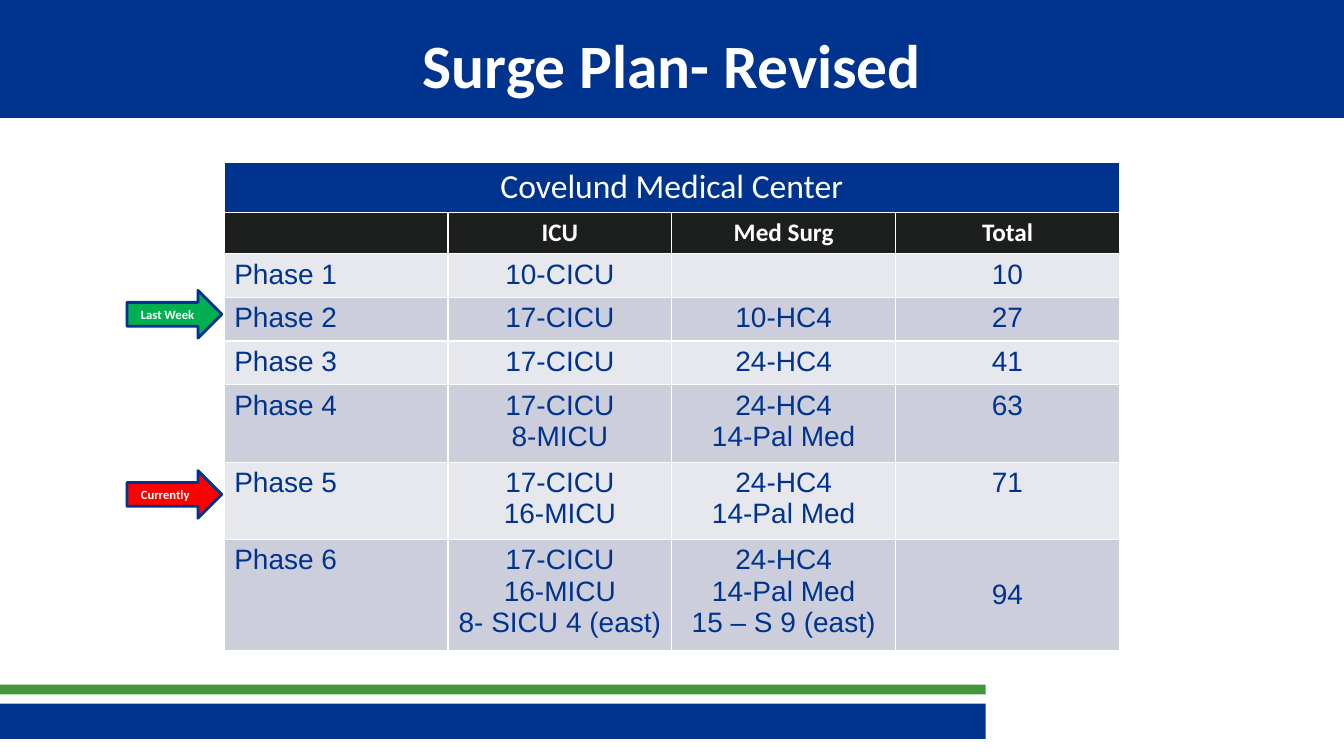
from lxml import etree
from pptx import Presentation
from pptx.dml.color import RGBColor
from pptx.enum import shapes, text
from pptx.oxml.ns import qn
from pptx.util import Cm, Pt

BLUE, GREEN, WHITE, BLACK = "00338E", "439539", "FFFFFF", "1D1E1E"
BANDS = ("E7E8EE", "CCCEDB")
LEFT, CENTER = text.PP_ALIGN.LEFT, text.PP_ALIGN.CENTER
MIDDLE = text.MSO_ANCHOR.MIDDLE

TITLE = dict(name="Calibri", size=Pt(44), bold=True, color=WHITE)
HOSPITAL = dict(name="Calibri", size=Pt(24), bold=False, color=WHITE)
HEADING = dict(name="Calibri", size=Pt(18), bold=True, color=WHITE)
BODY = dict(name="Arial", size=Pt(20), bold=False, color=BLUE)
LABEL = dict(name="Calibri", size=Pt(9), bold=True, color=WHITE)

HEADINGS = ("", "ICU", "Med Surg", "Total")
PHASES = [
    ("Phase 1", "10-CICU", "", "10"),
    ("Phase 2", "17-CICU", "10-HC4", "27"),
    ("Phase 3", "17-CICU", "24-HC4", "41"),
    ("Phase 4", "17-CICU\n8-MICU", "24-HC4\n14-Pal Med", "63"),
    ("Phase 5", "17-CICU\n16-MICU", "24-HC4\n14-Pal Med", "71"),
    ("Phase 6", "17-CICU\n16-MICU\n8- SICU 4 (east)",
     "24-HC4\n14-Pal Med\n15 – S 9 (east)", "94"),
]


def rgb(value):
    return RGBColor.from_string(value)


def write(tf, content, fmt, align=LEFT):
    tf.text = content
    for p in tf.paragraphs:
        p.alignment = align
        for key, value in fmt.items():
            if key == "color":
                p.font.color.rgb = rgb(value)
            else:
                setattr(p.font, key, value)


def add_block(parent, kind, box, fill, line=None):
    sp = parent.add_shape(kind, *map(Cm, box))
    sp.shadow.inherit = False
    sp.fill.solid()
    sp.fill.fore_color.rgb = rgb(fill)
    if line:
        sp.line.color.rgb = rgb(line)
        sp.line.width = Pt(2)
    else:
        sp.line.fill.background()


def add_text(parent, box, content, fmt, align=LEFT, wrap=True):
    tf = parent.add_textbox(*map(Cm, box)).text_frame
    tf.word_wrap = wrap
    tf.vertical_anchor = MIDDLE
    write(tf, content, fmt, align)


def add_marker(s, top, label, fill):
    """Arrow with a label, pointing at a table row."""
    group = s.shapes.add_group_shape().shapes
    add_block(group, shapes.MSO_SHAPE.RIGHT_ARROW, (3.2, top, 2.39, 1.2), fill, BLUE)
    add_text(group, (3.3, top + 0.28, 1.85, 0.64), label, LABEL, wrap=False)


def style_cell(cell, content, fmt, fill, align=CENTER):
    tcPr = cell._tc.get_or_add_tcPr()
    for side in ("lnL", "lnR", "lnT", "lnB"):
        ln = etree.SubElement(tcPr, qn(f"a:{side}"), w=str(Pt(1)))
        solid = etree.SubElement(ln, qn("a:solidFill"))
        etree.SubElement(solid, qn("a:srgbClr"), val=WHITE)
    cell.fill.solid()
    cell.fill.fore_color.rgb = rgb(fill)
    write(cell.text_frame, content, fmt, align)


def add_phase_table(s):
    rows = len(PHASES) + 2
    table = s.shapes.add_table(rows, 4, Cm(5.65), Cm(4.08), Cm(22.56), Cm(11.7)).table
    table.horz_banding = False

    # Heading rows
    for c, heading in enumerate(HEADINGS):
        style_cell(table.cell(0, c), "", HOSPITAL, BLUE)
        style_cell(table.cell(1, c), heading, HEADING, BLACK)
    table.cell(0, 0).merge(table.cell(0, 3))
    write(table.cell(0, 0).text_frame, "Covelund Medical Center", HOSPITAL, CENTER)
    table.rows[0].height = Cm(1.27)
    table.rows[1].height = Cm(1.04)

    # Phase rows, as high as their longest cell
    for i, phase in enumerate(PHASES):
        lines = max(value.count("\n") for value in phase) + 1
        table.rows[i + 2].height = Cm(0.25 + 0.79 * lines)
        for c, value in enumerate(phase):
            style_cell(table.cell(i + 2, c), value, BODY, BANDS[i % 2],
                       CENTER if c else LEFT)
    table.cell(rows - 1, 3).vertical_anchor = MIDDLE


def main():
    prs = Presentation()
    prs.slide_width, prs.slide_height = Cm(33.87), Cm(19.05)
    s = prs.slides.add_slide(prs.slide_layouts[6])

    # Footer bars and title band
    rect = shapes.MSO_SHAPE.RECTANGLE
    add_block(s.shapes, rect, (-0.08, 17.73, 24.92, 0.89), BLUE)
    add_block(s.shapes, rect, (-0.08, 17.25, 24.92, 0.25), GREEN)
    add_block(s.shapes, rect, (0, 0, 33.87, 2.97), BLUE)
    add_text(s.shapes, (1.7, 0.43, 30.48, 2.34), "Surge Plan- Revised", TITLE, CENTER)

    # Table and its markers
    add_phase_table(s)
    add_marker(s, 11.86, "Currently", "FF0000")
    add_marker(s, 7.32, "Last Week", "00B050")

    prs.save("out.pptx")


if __name__ == "__main__":
    main()
